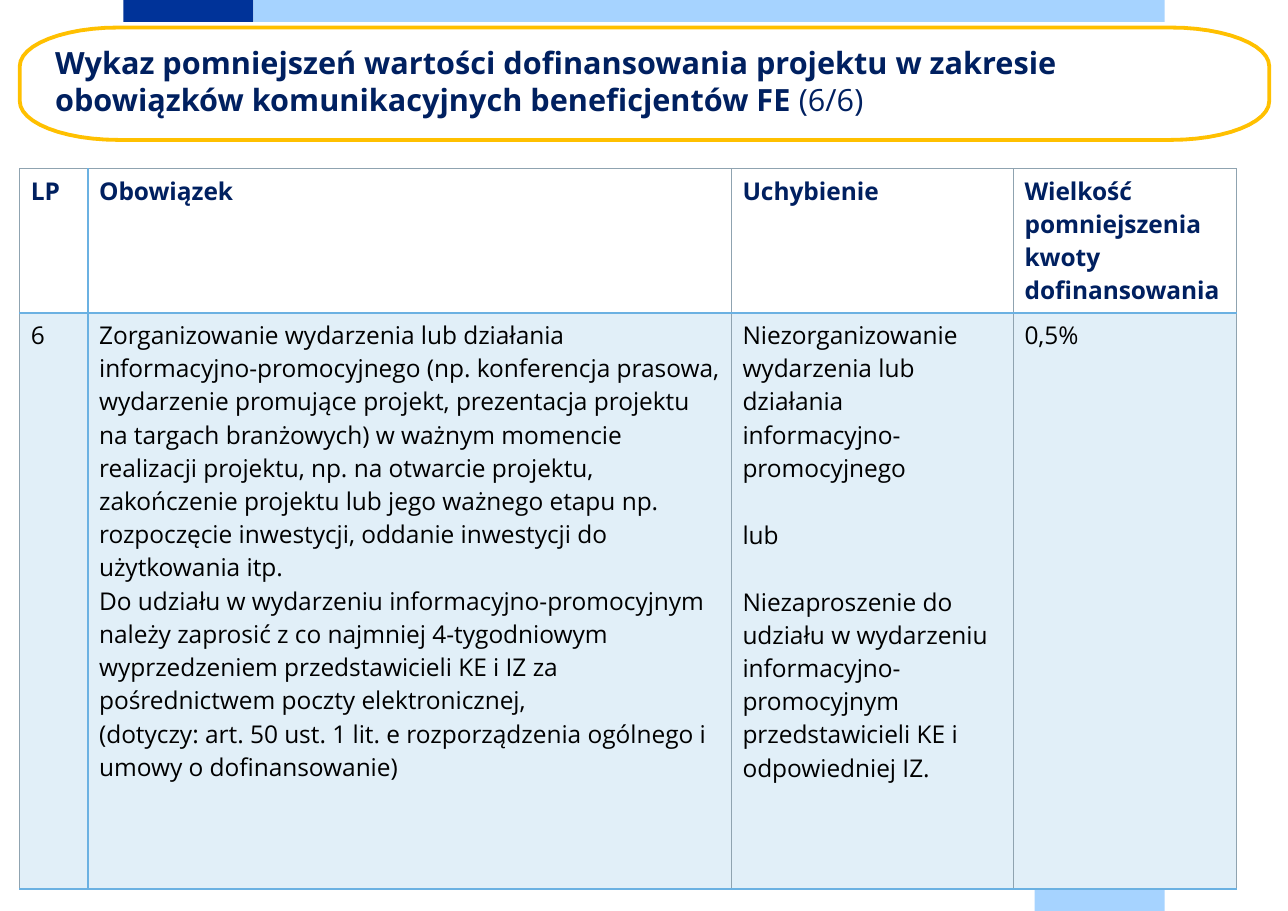
import math
from dataclasses import dataclass

from lxml import etree
from pptx import Presentation
from pptx.dml.color import RGBColor
from pptx.enum.shapes import MSO_SHAPE
from pptx.oxml.ns import qn
from pptx.util import Inches, Pt

RECTANGLE = MSO_SHAPE.RECTANGLE


@dataclass(frozen=True)
class Theme:
    font: str = "Open Sans"
    title_size: int = 20
    table_size: int = 16
    table_line: int = 22
    navy: str = "002060"
    black: str = "000000"
    white: str = "FFFFFF"
    dark_blue: str = "003399"
    light_blue: str = "A6D3FF"
    border_blue: str = "6BB1E2"
    border_gray: str = "8FA3B0"
    body_fill: str = "E1EFF8"
    gold: str = "FFC000"


THEME = Theme()

COLUMN_WIDTHS = [0.62, 5.84, 2.56, 2.02]
ROW_HEIGHTS = [1.31, 5.23]
HEADER = [
    ["LP"],
    ["Obowiązek"],
    ["Uchybienie"],
    ["Wielkość", "pomniejszenia", "kwoty", "dofinansowania"],
]
BODY = [
    ["6"],
    [
        "Zorganizowanie wydarzenia lub działania informacyjno-promocyjnego "
        "(np. konferencja prasowa, wydarzenie promujące projekt, prezentacja "
        "projektu na targach branżowych) w ważnym momencie realizacji projektu, "
        "np. na otwarcie projektu, zakończenie projektu lub jego ważnego etapu "
        "np. rozpoczęcie inwestycji, oddanie inwestycji do użytkowania itp.",
        "Do udziału w wydarzeniu informacyjno-promocyjnym należy zaprosić z co "
        "najmniej 4-tygodniowym wyprzedzeniem przedstawicieli KE i IZ za "
        "pośrednictwem poczty elektronicznej,",
        "(dotyczy: art. 50 ust. 1 lit. e rozporządzenia ogólnego i umowy o "
        "dofinansowanie)",
    ],
    [
        "Niezorganizowanie wydarzenia lub działania informacyjno-promocyjnego",
        "lub",
        "Niezaproszenie do udziału w wydarzeniu informacyjno-promocyjnym "
        "przedstawicieli KE i odpowiedniej IZ.",
    ],
    ["0,5%"],
]
SPACED_COLUMN = 2


def color(value):
    return RGBColor.from_string(value)


def write_run(paragraph, text, *, size, color_value, bold=False):
    run = paragraph.add_run()
    run.text = text
    run.font.name = THEME.font
    run.font.size = Pt(size)
    run.font.bold = bold
    run.font.color.rgb = color(color_value)


def write_paragraphs(text_frame, texts, *, space_before=0, **run_format):
    for index, text in enumerate(texts):
        paragraph = text_frame.paragraphs[0] if index == 0 else text_frame.add_paragraph()
        if index and space_before:
            paragraph.space_before = Pt(space_before)
        write_run(paragraph, text, **run_format)


def add_bar(slide, left, top, width, fill):
    shape = slide.shapes.add_shape(
        RECTANGLE, Inches(left), Inches(top), Inches(width), Inches(0.2))
    shape.shadow.inherit = False
    shape.fill.solid()
    shape.fill.fore_color.rgb = color(fill)
    shape.line.fill.background()


def add_title(slide):
    text_box = slide.shapes.add_textbox(
        Inches(0.5), Inches(0.4), Inches(10.8), Inches(0.87))
    frame = text_box.text_frame
    frame.word_wrap = True
    frame.margin_left = frame.margin_top = frame.margin_right = frame.margin_bottom = 0
    paragraph = frame.paragraphs[0]
    paragraph.line_spacing = Pt(24)
    title_format = {"size": THEME.title_size, "color_value": THEME.navy}
    write_run(paragraph, "Wykaz pomniejszeń wartości dofinansowania projektu w zakresie "
              "obowiązków komunikacyjnych beneficjentów FE ", bold=True, **title_format)
    write_run(paragraph, "(6/6)", **title_format)


def add_title_frame(slide, left, top, width, height, radius_x, radius_y):
    """Outline with elliptical corners, clockwise from the left side."""
    right, bottom = left + width, top + height
    corners = [
        (left + radius_x, top + radius_y, 180),
        (right - radius_x, top + radius_y, 270),
        (right - radius_x, bottom - radius_y, 0),
        (left + radius_x, bottom - radius_y, 90),
    ]
    points = []
    for center_x, center_y, start in corners:
        for step in range(13):
            angle = math.radians(start + step * 7.5)
            points.append((Inches(center_x + radius_x * math.cos(angle)),
                           Inches(center_y + radius_y * math.sin(angle))))
    builder = slide.shapes.build_freeform(*points[0])
    builder.add_line_segments(points[1:], close=True)
    shape = builder.convert_to_shape()
    shape.shadow.inherit = False
    shape.fill.background()
    shape.line.color.rgb = color(THEME.gold)
    shape.line.width = Pt(2.5)


def set_border(cell, side, color_value, width):
    properties = cell._tc.get_or_add_tcPr()
    line = etree.SubElement(properties, qn(f"a:ln{side}"), w=str(Pt(width)))
    fill = etree.SubElement(line, qn("a:solidFill"))
    etree.SubElement(fill, qn("a:srgbClr"), val=color_value)


def format_cell(cell, row, column, fill):
    blue, gray = (THEME.border_blue, 1.5), (THEME.border_gray, 0.75)
    set_border(cell, "L", *(blue if column == 1 else gray))
    set_border(cell, "R", *(blue if column == 0 else gray))
    set_border(cell, "T", *(gray if row == 0 else blue))
    set_border(cell, "B", *blue)
    cell.fill.solid()
    cell.fill.fore_color.rgb = color(fill)


def add_duty_table(slide):
    table = slide.shapes.add_table(
        len(ROW_HEIGHTS), len(COLUMN_WIDTHS), Inches(0.18), Inches(1.53),
        Inches(sum(COLUMN_WIDTHS)), Inches(sum(ROW_HEIGHTS))).table
    table.horz_banding = False
    for column, width in zip(table.columns, COLUMN_WIDTHS):
        column.width = Inches(width)
    for row, height in zip(table.rows, ROW_HEIGHTS):
        row.height = Inches(height)

    row_styles = [(HEADER, THEME.white, THEME.navy, True),
                  (BODY, THEME.body_fill, THEME.black, False)]
    for row, (contents, fill, text_color, bold) in enumerate(row_styles):
        for column, texts in enumerate(contents):
            cell = table.cell(row, column)
            format_cell(cell, row, column, fill)
            write_paragraphs(
                cell.text_frame, texts, size=THEME.table_size,
                color_value=text_color, bold=bold,
                space_before=THEME.table_line if column == SPACED_COLUMN else 0)


def main():
    presentation = Presentation()
    presentation.slide_width = Inches(11.69)
    presentation.slide_height = Inches(8.27)
    slide = presentation.slides.add_slide(presentation.slide_layouts[6])

    # Edge bars
    add_bar(slide, 1.12, 0, 1.18, THEME.dark_blue)
    add_bar(slide, 2.3, 0, 8.27, THEME.light_blue)
    add_bar(slide, 9.39, 8.07, 1.18, THEME.light_blue)

    # Title, table and title outline
    add_title(slide)
    add_duty_table(slide)
    add_title_frame(slide, 0.18, 0.25, 11.34, 1.02, 0.89, 0.35)

    presentation.save("out.pptx")


if __name__ == "__main__":
    main()
